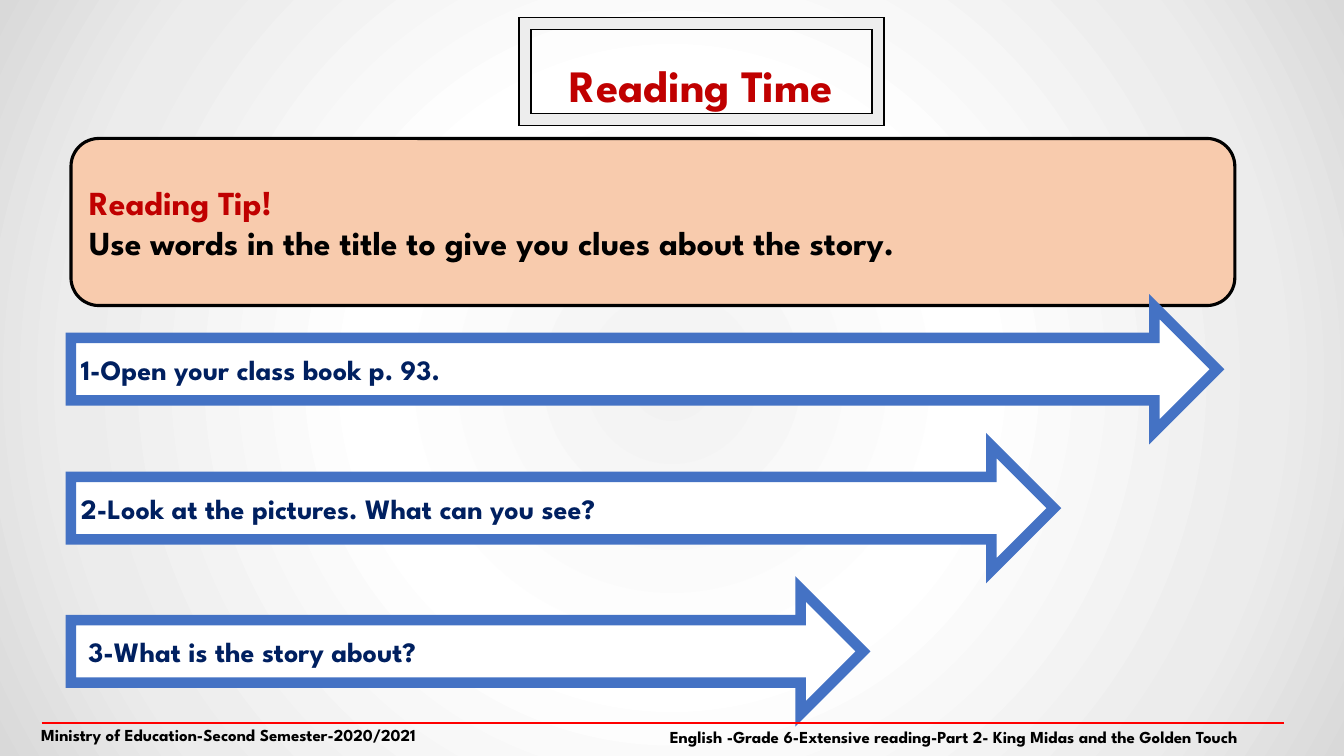
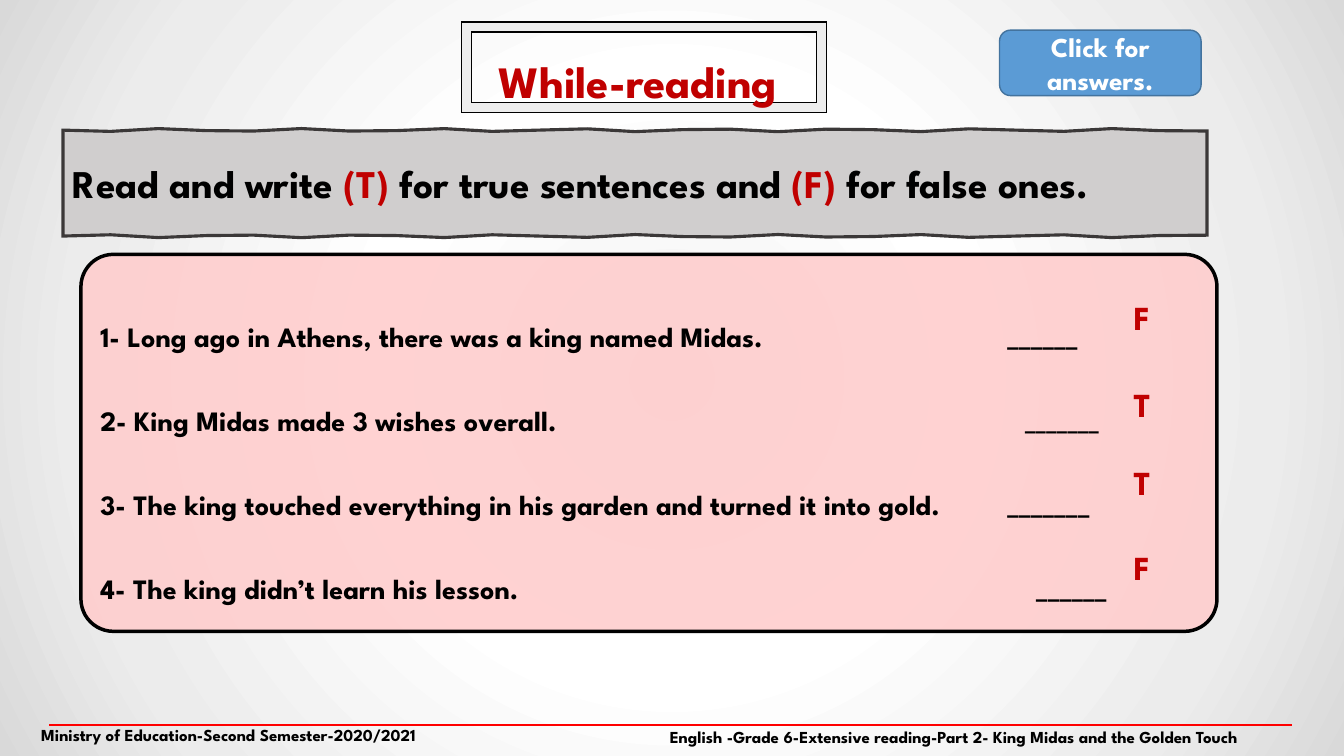
from math import sin

from pptx import Presentation
from pptx.dml.color import RGBColor
from pptx.enum.shapes import MSO_CONNECTOR as CONN, MSO_SHAPE as SHAPE
from pptx.enum.text import MSO_ANCHOR as ANCHOR, PP_ALIGN as ALIGN
from pptx.oxml import parse_xml
from pptx.oxml.ns import nsdecls, qn
from pptx.util import Cm, Pt
from lxml.etree import SubElement

FONT = "League Spartan"
C = {
    "black": "000000", "white": "FFFFFF", "red": "C00000", "navy": "002060",
    "rule": "FF0000", "frame": "EDEDED", "tip": "F8CBAD", "arrow": "4472C4",
    "button": "5B9BD5", "button_line": "43739E", "panel": "FFCCCC",
    "band": "D0CECE", "band_line": "3B3838",
}
BACKGROUND = [(0, "F2F2F2"), (39, "FFFFFF"), (78, "ECECEC"), (100, "D9D9D9")]


def rgb(name):
    return RGBColor.from_string(C[name])


# Text: each paragraph is a string or a list of (text, colour, size) runs
def write(sp, *paragraphs, size=20, color="black", align=ALIGN.LEFT,
          spacing=None, anchor=ANCHOR.MIDDLE, tabs=()):
    tf = sp.text_frame
    tf.word_wrap = True
    tf.vertical_anchor = anchor
    for i, content in enumerate(paragraphs):
        p = tf.add_paragraph() if i else tf.paragraphs[0]
        p.alignment = align
        if spacing:
            p.line_spacing = spacing
        if tabs:
            tab_list = SubElement(p._p.get_or_add_pPr(), qn("a:tabLst"))
            SubElement(tab_list, qn("a:tab"), pos=str(Cm(tabs[i])), algn="l")
        runs = [(content, color, size)] if isinstance(content, str) else content
        for text, run_color, run_size in runs:
            r = p.add_run()
            r.text = text
            r.font.name, r.font.size, r.font.bold = FONT, Pt(run_size), True
            r.font.color.rgb = rgb(run_color)


# Fill and line of any shape
def paint(sp, fill, line, width=1, alpha=None):
    sp.shadow.inherit = False
    sp.fill.solid()
    sp.fill.fore_color.rgb = rgb(fill)
    if alpha:
        color = sp.fill._xPr.find(".//" + qn("a:srgbClr"))
        SubElement(color, qn("a:alpha"), val=str(alpha * 1000))
    sp.line.color.rgb = rgb(line)
    sp.line.width = Pt(width)
    SubElement(sp.line._ln, qn("a:miter"), lim="800000")


def box(s, kind, x, y, w, h, adj=None, **style):
    sp = s.shapes.add_shape(kind, Cm(x), Cm(y), Cm(w), Cm(h))
    if adj is not None:
        sp.adjustments[0] = adj
    paint(sp, **style)
    return sp


def label(s, text, x, y, w, h, **fmt):
    write(s.shapes.add_textbox(Cm(x), Cm(y), Cm(w), Cm(h)), text, **fmt)


def title(s, text, x, y, h):
    sp = box(s, SHAPE.FRAME, x, y, 9.2, h, adj=0.11, fill="frame", line="black")
    write(sp, text, size=32, color="red", align=ALIGN.CENTER, spacing=1.5)


def footer(s, x, y):
    rule = s.shapes.add_connector(CONN.STRAIGHT, Cm(x), Cm(y), Cm(x + 31.32), Cm(y))
    rule.line.color.rgb = rgb("rule")
    rule.line.width = Pt(1.5)
    SubElement(rule._element.spPr, qn("a:effectLst"))
    label(s, "Ministry of Education-Second Semester-2020/2021",
          0.79, 18.14, 10.85, 0.76, size=12, anchor=ANCHOR.TOP)
    label(s, "English -Grade 6-Extensive reading-Part 2- King Midas and the Golden Touch",
          16.63, 18.19, 16.38, 0.76, size=12, anchor=ANCHOR.TOP)


# Rectangle with slightly wavy top and bottom edges
def sketch(s, x, y, w, h, **style):
    n = 24
    steps = [(x + w * i / n, 0.04 * sin(2.2 * i)) for i in range(n + 1)]
    points = [(Cm(px), Cm(y + dy)) for px, dy in steps]
    points += [(Cm(px), Cm(y + h - dy)) for px, dy in reversed(steps)]
    fb = s.shapes.build_freeform(*points[0], scale=1.0)
    fb.add_line_segments(points[1:], close=True)
    sp = fb.convert_to_shape()
    paint(sp, **style)
    return sp


# Radial background shared by all slides
def set_background(master):
    master.background.fill.gradient()
    grad = master.element.find(".//" + qn("p:bgPr")).find(qn("a:gradFill"))
    stops = "".join(f'<a:gs pos="{pos * 1000}"><a:srgbClr val="{color}"/></a:gs>'
                    for pos, color in BACKGROUND)
    radial = parse_xml(
        f'<a:gradFill {nsdecls("a")} rotWithShape="1"><a:gsLst>{stops}</a:gsLst>'
        '<a:path path="circle"><a:fillToRect l="50000" t="50000" r="50000" b="50000"/>'
        "</a:path></a:gradFill>")
    grad.getparent().replace(grad, radial)


def reading_time(s):
    title(s, "Reading Time", 13.08, 0.44, 2.72)
    tip = box(s, SHAPE.ROUNDED_RECTANGLE, 1.79, 3.49, 29.33, 4.21,
              fill="tip", line="black", width=2.25)
    write(tip, [("Reading Tip!", "red", 24)],
          "Use words in the title to give you clues about the story.", size=24)

    # Steps
    steps = [("1-Open your class book p. 93.", 7.73, 28.88),
             ("2-Look at the pictures. What can you see?", 11.23, 24.77),
             (" 3-What is the story about?", 14.84, 19.96)]
    for text, y, w in steps:
        arrow = box(s, SHAPE.RIGHT_ARROW, 1.79, y, w, 3.15,
                    fill="white", line="arrow", width=7.5)
        write(arrow, text, color="navy")
    footer(s, 1.05, 18.21)


def while_reading(s):
    button = box(s, SHAPE.ROUNDED_RECTANGLE, 25.19, 0.76, 5.08, 1.65,
                 fill="button", line="button_line")
    write(button, "Click for answers.", size=19.5, color="white", align=ALIGN.CENTER)

    # Sentences: text, blank, size of blank, tab of blank, answer, top of answer
    rows = [
        ("1- Long ago in Athens, there was a king named Midas.",
         "______", 20, 22.85, "F", 7.36),
        ("2- King Midas made 3 wishes overall.", "_______", 18, 23.3, "T", 9.55),
        ("3- The king touched everything in his garden and turned it into gold.",
         "_______", 20, 22.85, "T", 11.51),
        ("4- The king didn’t learn his lesson.", "______", 20, 23.58, "F", 13.66),
    ]
    panel = box(s, SHAPE.ROUNDED_RECTANGLE, 2.04, 6.41, 28.63, 9.5, adj=0.086,
                fill="panel", alpha=87, line="black", width=2.5)
    write(panel, *([(text + "\t", "black", 20), (blank, "black", size)]
                   for text, blank, size, *_ in rows),
          spacing=2.5, anchor=ANCHOR.TOP, tabs=[row[3] for row in rows])
    for *_, answer, y in rows:
        label(s, answer, 28.32, y, 1.07, 1.27, size=24, color="red")

    title(s, "While-reading ", 11.63, 0.56, 2.27)

    # Instruction band
    band = sketch(s, 1.59, 3.28, 28.83, 2.67,
                  fill="band", line="band_line", width=2.25)
    write(band, [("Read and write ", "black", 28), ("(T) ", "red", 28),
                 ("for true sentences and ", "black", 28), ("(F) ", "red", 28),
                 ("for false ones.", "black", 28)])
    footer(s, 1.24, 18.27)


def main():
    prs = Presentation()
    prs.slide_width, prs.slide_height = Cm(33.87), Cm(19.05)
    set_background(prs.slide_master)
    for build in (reading_time, while_reading):
        build(prs.slides.add_slide(prs.slide_layouts[6]))
    prs.save("out.pptx")


if __name__ == "__main__":
    main()
